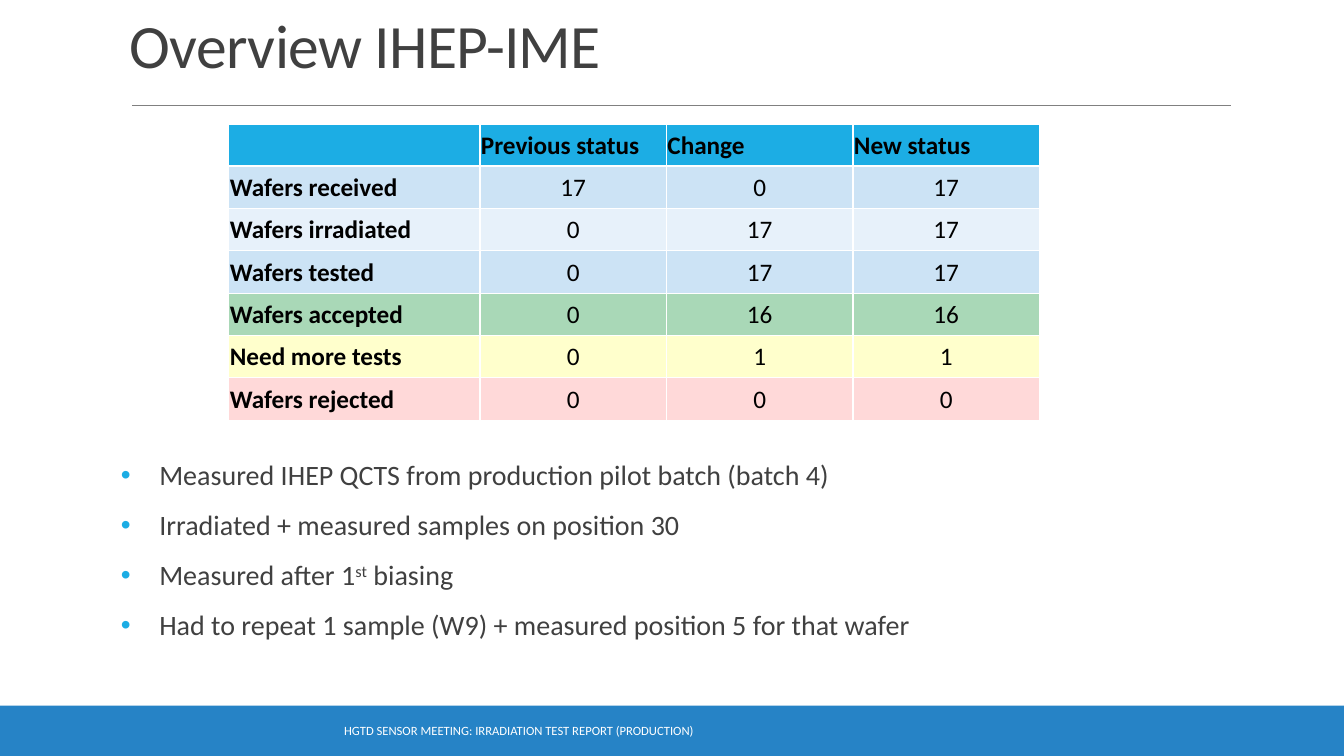
from dataclasses import dataclass

from lxml import etree
from pptx import Presentation, util as u
from pptx.dml.color import RGBColor
from pptx.enum import shapes, text
from pptx.oxml import ns

FONT = "Calibri"
WHITE = RGBColor(0xFF, 0xFF, 0xFF)
BLACK = RGBColor(0x00, 0x00, 0x00)
DARK = RGBColor(0x40, 0x40, 0x40)
RULE_GRAY = RGBColor(0x80, 0x80, 0x80)
FOOTER_BLUE = RGBColor(0x26, 0x83, 0xC6)
ACCENT = RGBColor(0x1C, 0xAD, 0xE4)
BAND = RGBColor(0xCC, 0xE3, 0xF5)
LIGHT_BAND = RGBColor(0xE7, 0xF1, 0xFA)
GREEN = RGBColor(0xA9, 0xD8, 0xB7)
YELLOW = RGBColor(0xFF, 0xFF, 0xCC)
RED = RGBColor(0xFF, 0xD9, 0xD9)


@dataclass
class StatusRow:
    cells: tuple[str, ...]
    fill: RGBColor
    header: bool = False


@dataclass
class TextStyle:
    size: float
    color: RGBColor
    bold: bool = False


STATUS_ROWS = [
    StatusRow(("", "Previous status", "Change", "New status"), ACCENT, header=True),
    StatusRow(("Wafers received", "17", "0", "17"), BAND),
    StatusRow(("Wafers irradiated", "0", "17", "17"), LIGHT_BAND),
    StatusRow(("Wafers tested", "0", "17", "17"), BAND),
    StatusRow(("Wafers accepted", "0", "16", "16"), GREEN),
    StatusRow(("Need more tests", "0", "1", "1"), YELLOW),
    StatusRow(("Wafers rejected", "0", "0", "0"), RED),
]
COLUMN_WIDTHS = (2.49, 1.85, 1.85, 1.85)
ROW_HEIGHT = 0.42

# Each bullet is a list of (text, superscript) pieces.
BULLETS = [
    [("Measured IHEP QCTS from production pilot batch (batch 4)", False)],
    [("Irradiated + measured samples on position 30", False)],
    [("Measured after 1", False), ("st", True), (" biasing", False)],
    [("Had to repeat 1 sample (W9) + measured position 5 for that wafer", False)],
]

TITLE_STYLE = TextStyle(44, DARK)
BODY_STYLE = TextStyle(20, DARK)
FOOTER_STYLE = TextStyle(9, WHITE)


def apply_format(target, values: dict) -> None:
    for attribute, value in values.items():
        setattr(target, attribute, value)


def add_run(paragraph, wording: str, style: TextStyle):
    run = paragraph.add_run()
    run.text = wording
    apply_format(run.font, {"name": FONT, "size": u.Pt(style.size), "bold": style.bold})
    run.font.color.rgb = style.color
    return run


def add_frame(slide, left: float, top: float, width: float, height: float, anchor):
    box = slide.shapes.add_textbox(*map(u.Inches, (left, top, width, height)))
    apply_format(box.text_frame, {"word_wrap": True, "vertical_anchor": anchor})
    return box.text_frame


def add_footer(slide) -> None:
    band = slide.shapes.add_shape(
        shapes.MSO_SHAPE.RECTANGLE, 0, u.Inches(7), u.Inches(13.33), u.Inches(0.5))
    band.shadow.inherit = False
    band.fill.solid()
    band.fill.fore_color.rgb = FOOTER_BLUE
    band.line.fill.background()
    frame = add_frame(slide, 1.21, 7.05, 7.87, 0.4, text.MSO_ANCHOR.MIDDLE)
    footer = frame.paragraphs[0]
    footer.alignment = text.PP_ALIGN.CENTER
    add_run(footer, "HGTD SENSOR MEETING: IRRADIATION TEST REPORT (PRODUCTION)", FOOTER_STYLE)


def add_title(slide) -> None:
    """Add the heading and the thin rule below it."""
    rule = slide.shapes.add_connector(
        shapes.MSO_CONNECTOR.STRAIGHT, *map(u.Inches, (1.31, 1.05, 12.21, 1.05)))
    rule.line.color.rgb = RULE_GRAY
    rule.line.width = u.Pt(0.5)
    etree.SubElement(rule._element.spPr, ns.qn("a:effectLst"))
    frame = add_frame(slide, 1.19, -0.74, 11, 1.59, text.MSO_ANCHOR.BOTTOM)
    title = frame.paragraphs[0]
    title.line_spacing = 0.85
    run = add_run(title, "Overview IHEP-IME", TITLE_STYLE)
    run._r.get_or_add_rPr().set("spc", "-50")


def add_bullet(paragraph) -> None:
    properties = paragraph._p.get_or_add_pPr()
    properties.set("marL", str(u.Inches(0.38)))
    properties.set("indent", str(u.Inches(-0.38)))
    color = etree.SubElement(properties, ns.qn("a:buClr"))
    etree.SubElement(color, ns.qn("a:srgbClr"), val=str(ACCENT))
    etree.SubElement(properties, ns.qn("a:buFont"), typeface="Arial")
    etree.SubElement(properties, ns.qn("a:buChar"), char="•")


def add_notes_list(slide) -> None:
    """Add the bulleted remarks below the table."""
    frame = add_frame(slide, 1.2, 4.53, 11, 2.05, text.MSO_ANCHOR.TOP)
    apply_format(frame, {"margin_left": 0, "margin_right": 0})
    for index, pieces in enumerate(BULLETS):
        remark = frame.add_paragraph() if index else frame.paragraphs[0]
        add_bullet(remark)
        apply_format(remark, {"line_spacing": 0.9, "space_after": u.Pt(2),
                              "space_before": u.Pt(12 if index else 0)})
        for wording, superscript in pieces:
            run = add_run(remark, wording, BODY_STYLE)
            if superscript:
                run._r.get_or_add_rPr().set("baseline", "30000")


def add_borders(cell, top: float, bottom: float) -> None:
    properties = cell._tc.get_or_add_tcPr()
    for side, points in {"L": 1, "R": 1, "T": top, "B": bottom}.items():
        line = etree.SubElement(properties, ns.qn(f"a:ln{side}"), w=str(u.Pt(points)))
        fill = etree.SubElement(line, ns.qn("a:solidFill"))
        etree.SubElement(fill, ns.qn("a:srgbClr"), val=str(WHITE))


def add_status_table(slide) -> None:
    table = slide.shapes.add_table(
        len(STATUS_ROWS), len(COLUMN_WIDTHS), u.Inches(2.27), u.Inches(1.23),
        u.Inches(sum(COLUMN_WIDTHS)), u.Inches(ROW_HEIGHT * len(STATUS_ROWS))).table
    apply_format(table, {"first_row": False, "horz_banding": False})
    for column, width in zip(table.columns, COLUMN_WIDTHS):
        column.width = u.Inches(width)
    margin = u.Inches(0.01)
    cell_format = {"margin_left": margin, "margin_right": margin, "margin_top": margin,
                   "margin_bottom": 0, "vertical_anchor": text.MSO_ANCHOR.MIDDLE}
    for row_index, status in enumerate(STATUS_ROWS):
        table.rows[row_index].height = u.Inches(ROW_HEIGHT)
        for column_index, wording in enumerate(status.cells):
            cell = table.cell(row_index, column_index)
            apply_format(cell, cell_format)
            add_borders(cell, top=1.5 if row_index == 1 else 1,
                        bottom=1.5 if status.header else 1)
            cell.fill.solid()
            cell.fill.fore_color.rgb = status.fill
            if not wording:
                continue
            label = status.header or column_index == 0
            entry = cell.text_frame.paragraphs[0]
            entry.alignment = text.PP_ALIGN.LEFT if label else text.PP_ALIGN.CENTER
            add_run(entry, wording, TextStyle(18, BLACK, bold=label))


def main() -> None:
    presentation = Presentation()
    presentation.slide_width = u.Inches(13.33)
    presentation.slide_height = u.Inches(7.5)
    slide = presentation.slides.add_slide(presentation.slide_layouts[6])
    add_footer(slide)
    add_title(slide)
    add_notes_list(slide)
    add_status_table(slide)
    presentation.save("out.pptx")


if __name__ == "__main__":
    main()
